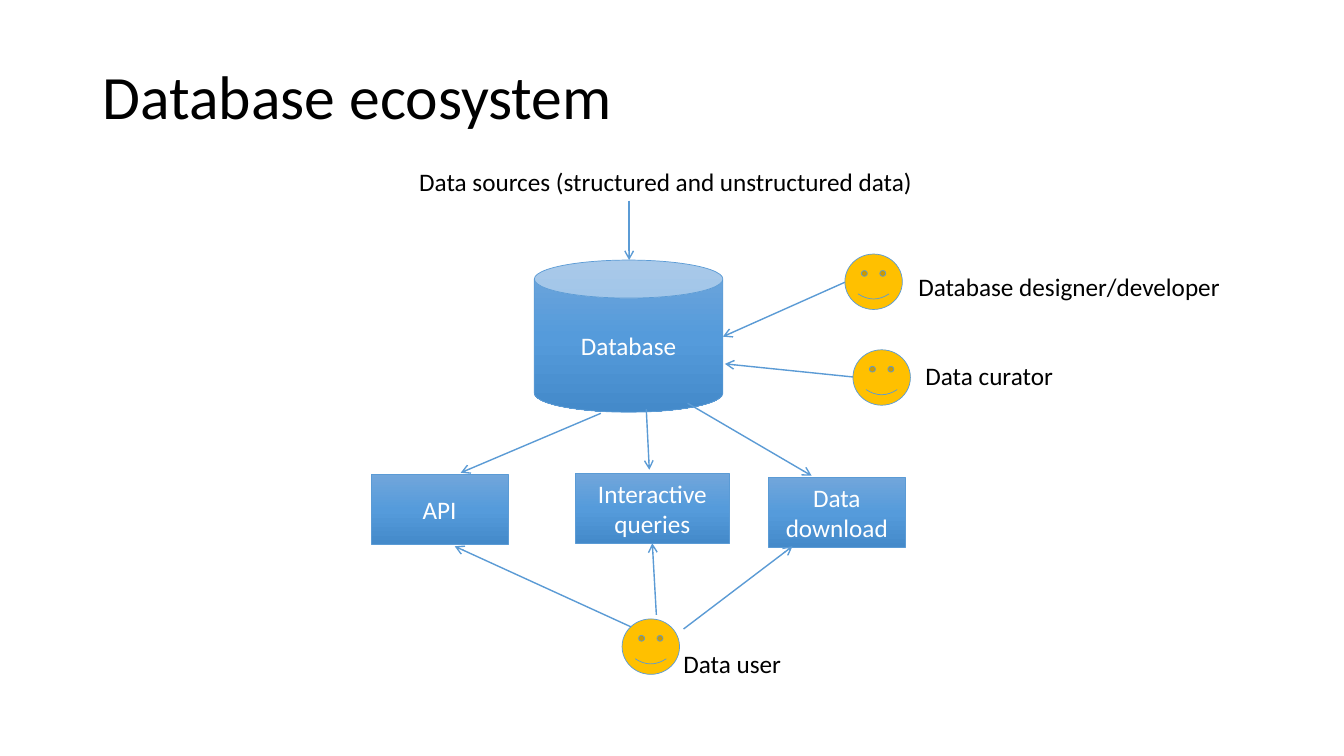
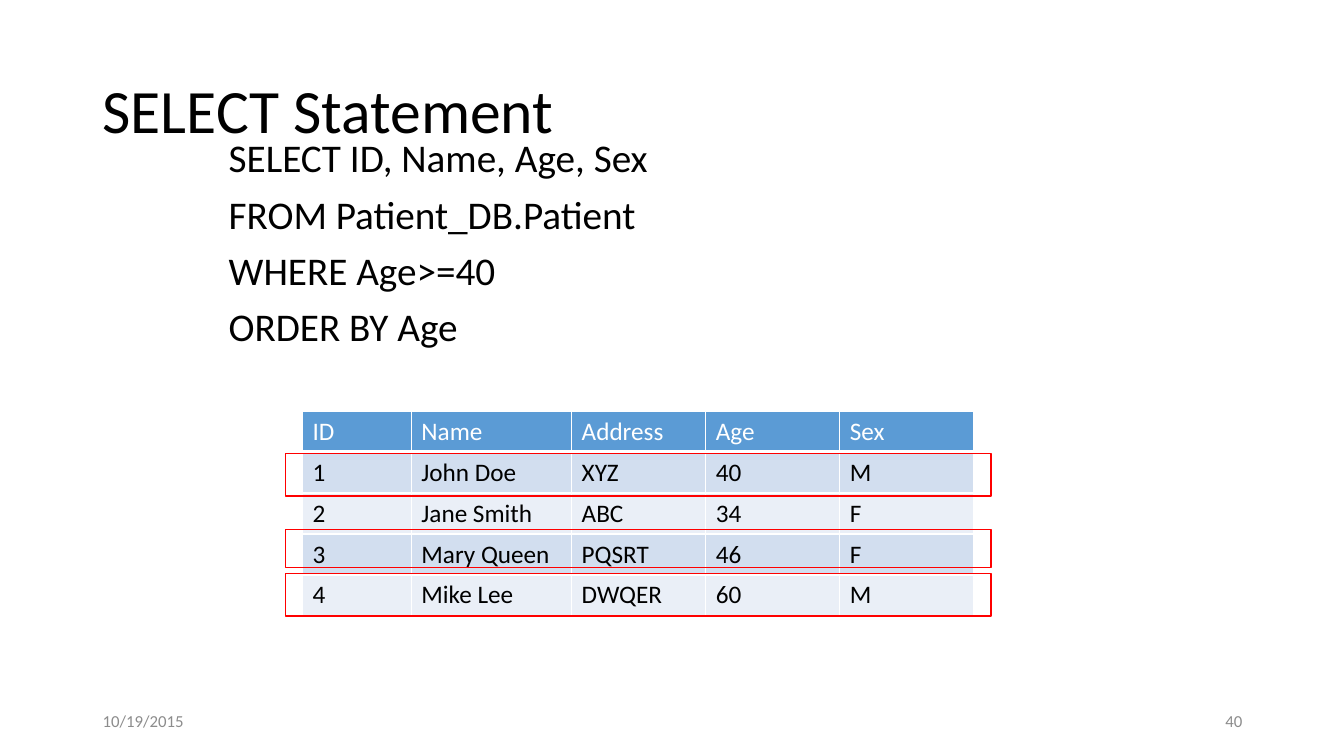
from dataclasses import dataclass
from typing import NamedTuple

from lxml import etree
from pptx import Presentation
from pptx.dml.color import RGBColor
from pptx.enum.shapes import MSO_CONNECTOR, MSO_SHAPE
from pptx.enum.text import MSO_ANCHOR, PP_ALIGN
from pptx.oxml.ns import qn
from pptx.slide import Slide
from pptx.text.text import TextFrame
from pptx.util import Emu, Pt

RECT, CAN, SMILEY = MSO_SHAPE.RECTANGLE, MSO_SHAPE.CAN, MSO_SHAPE.SMILEY_FACE
STRAIGHT = MSO_CONNECTOR.STRAIGHT
TOP, MIDDLE = MSO_ANCHOR.TOP, MSO_ANCHOR.MIDDLE
LEFT, CENTER, RIGHT = PP_ALIGN.LEFT, PP_ALIGN.CENTER, PP_ALIGN.RIGHT

EMU_PER_PX = 9144  # 100 px to the inch


@dataclass(frozen=True)
class Theme:
    font: str = "Calibri"
    text: str = "000000"
    light: str = "FFFFFF"
    muted: str = "8C8C8C"
    accent: str = "5B9BD5"
    gradient: tuple[str, ...] = ("71A6DB", "559BDB", "448ACA")
    face: str = "FFC000"
    highlight: str = "FF0000"
    bands: tuple[str, ...] = ("D2DEEF", "EAEFF7")
    title_size: int = 44
    body_size: int = 28
    label_size: int = 18
    footer_size: int = 12
    outline: float = 0.5
    rule: float = 1
    header_rule: float = 3


THEME = Theme()


class Box(NamedTuple):
    x: int
    y: int
    w: int
    h: int

    def emu(self) -> list[Emu]:
        return [px(v) for v in self]


class Node(NamedTuple):
    kind: MSO_SHAPE
    text: str
    box: Box


class Person(NamedTuple):
    role: str
    x: int
    y: int
    label: Box


class Arrow(NamedTuple):
    x1: int
    y1: int
    x2: int
    y2: int


SOURCES = "Data sources (structured and unstructured data)"
SOURCES_BOX = Box(406, 160, 516, 40)
NODES = [
    Node(CAN, "Database", Box(530, 258, 187, 151)),
    Node(RECT, "API", Box(368, 471, 136, 69)),
    Node(RECT, "Interactive queries", Box(571, 470, 152, 69)),
    Node(RECT, "Data download", Box(762, 474, 136, 69)),
]
FACE_W, FACE_H = 57, 55
PEOPLE = [
    Person("Database designer/developer", 838, 252, Box(901, 264, 323, 40)),
    Person("Data curator", 846, 347, Box(908, 353, 149, 40)),
    Person("Data user", 617, 614, Box(668, 638, 119, 40)),
]
ARROWS = [
    Arrow(624, 199, 624, 258),
    Arrow(838, 280, 717, 334),
    Arrow(846, 374, 719, 361),
    Arrow(596, 410, 457, 469),
    Arrow(641, 406, 644, 466),
    Arrow(682, 400, 805, 472),
    Arrow(626, 622, 451, 542),
    Arrow(651, 610, 647, 539),
    Arrow(678, 624, 786, 542),
]

QUERY = ["SELECT ID, Name, Age, Sex", "FROM Patient_DB.Patient",
         "WHERE Age>=40", "ORDER BY Age"]
PATIENTS = [
    ("ID", "Name", "Address", "Age", "Sex"),
    ("1", "John Doe", "XYZ", "40", "M"),
    ("2", "Jane Smith", "ABC", "34", "F"),
    ("3", "Mary Queen", "PQSRT", "46", "F"),
    ("4", "Mike Lee", "DWQER", "60", "M"),
]
TABLE_BOX = Box(300, 408, 667, 203)
COL_WIDTHS = (108, 159, 133, 133, 133)
MATCHES = [Box(283, 450, 700, 42), Box(283, 525, 700, 38), Box(283, 569, 700, 42)]


def px(n: int) -> Emu:
    return Emu(n * EMU_PER_PX)


def rgb(color: str) -> RGBColor:
    return RGBColor.from_string(color)


def write(tf: TextFrame, text: str, size: int, color: str, align: PP_ALIGN = LEFT,
          spacing: float = 1, before: int = 0) -> None:
    tf.text = text
    for p in tf.paragraphs:
        p.alignment, p.line_spacing, p.space_before = align, spacing, Pt(before)
        for r in p.runs:
            r.font.name, r.font.size, r.font.bold = THEME.font, Pt(size), False
            r.font.color.rgb = rgb(color)


def add_text(s: Slide, box: Box, text: str, size: int, color: str = THEME.text,
             align: PP_ALIGN = LEFT, anchor: MSO_ANCHOR = TOP, wrap: bool = True,
             spacing: float = 1, before: int = 0) -> None:
    tf = s.shapes.add_textbox(*box.emu()).text_frame
    tf.word_wrap, tf.vertical_anchor = wrap, anchor
    write(tf, text, size, color, align, spacing, before)


def add_label(s: Slide, box: Box, text: str) -> None:
    add_text(s, box, text, THEME.label_size, wrap=False)


def add_title(s: Slide, text: str, y: int) -> None:
    add_text(s, Box(92, y, 1150, 145), text, THEME.title_size,
             anchor=MIDDLE, spacing=0.9)


def add_footer(s: Slide, date: str, number: str) -> None:
    for x, text, align in ((92, date, LEFT), (942, number, RIGHT)):
        add_text(s, Box(x, 695, 300, 40), text, THEME.footer_size, THEME.muted,
                 align, MIDDLE)


def add_outlined(s: Slide, kind: MSO_SHAPE, box: Box, color: str, width: float):
    sp = s.shapes.add_shape(kind, *box.emu())
    sp.shadow.inherit = False
    sp.line.color.rgb, sp.line.width = rgb(color), Pt(width)
    return sp


def add_node(s: Slide, node: Node) -> None:
    sp = add_outlined(s, node.kind, node.box, THEME.accent, THEME.outline)
    sp.fill.gradient()
    sp.fill.gradient_angle = 270
    stops = sp._element.spPr.find(f"{qn('a:gradFill')}/{qn('a:gsLst')}")
    for stop in list(stops):
        stops.remove(stop)
    for i, color in enumerate(THEME.gradient):
        stop = etree.SubElement(stops, qn("a:gs"), pos=str(i * 50000))
        etree.SubElement(stop, qn("a:srgbClr"), val=color)
    sp.text_frame.word_wrap, sp.text_frame.vertical_anchor = True, MIDDLE
    write(sp.text_frame, node.text, THEME.label_size, THEME.light, CENTER)


def add_person(s: Slide, person: Person) -> None:
    box = Box(person.x, person.y, FACE_W, FACE_H)
    sp = add_outlined(s, SMILEY, box, THEME.accent, THEME.outline)
    sp.fill.solid()
    sp.fill.fore_color.rgb = rgb(THEME.face)
    add_label(s, person.label, person.role)


def add_arrow(s: Slide, arrow: Arrow) -> None:
    line = s.shapes.add_connector(STRAIGHT, *[px(v) for v in arrow])
    line.line.color.rgb, line.line.width = rgb(THEME.accent), Pt(THEME.rule)
    etree.SubElement(line.line._get_or_add_ln(), qn("a:tailEnd"), type="arrow")
    etree.SubElement(line._element.spPr, qn("a:effectLst"))


def set_borders(cell, top: float, bottom: float) -> None:
    tc_pr = cell._tc.get_or_add_tcPr()
    widths = {"L": THEME.rule, "R": THEME.rule, "T": top, "B": bottom}
    for side, width in widths.items():
        ln = etree.SubElement(tc_pr, qn(f"a:ln{side}"), w=str(Pt(width)))
        fill = etree.SubElement(ln, qn("a:solidFill"))
        etree.SubElement(fill, qn("a:srgbClr"), val=THEME.light)


def add_patient_table(s: Slide) -> None:
    table = s.shapes.add_table(len(PATIENTS), len(COL_WIDTHS), *TABLE_BOX.emu()).table
    table.first_row = table.horz_banding = False
    for col, width in zip(table.columns, COL_WIDTHS):
        col.width = px(width)
    for i, values in enumerate(PATIENTS):
        header = i == 0
        top = THEME.header_rule if i == 1 else THEME.rule
        bottom = THEME.header_rule if header else THEME.rule
        for cell, value in zip(table.rows[i].cells, values):
            set_borders(cell, top, bottom)
            cell.fill.solid()
            band = THEME.bands[(i - 1) % len(THEME.bands)]
            cell.fill.fore_color.rgb = rgb(THEME.accent if header else band)
            write(cell.text_frame, value, THEME.label_size,
                  THEME.light if header else THEME.text)


def build_ecosystem(s: Slide) -> None:
    add_title(s, "Database ecosystem", 26)
    add_label(s, SOURCES_BOX, SOURCES)
    for node in NODES:
        add_node(s, node)
    for person in PEOPLE:
        add_person(s, person)
    for arrow in ARROWS:
        add_arrow(s, arrow)


def build_select(s: Slide) -> None:
    add_title(s, "SELECT Statement", 40)
    add_text(s, Box(217, 133, 900, 495), "\n".join(QUERY), THEME.body_size,
             spacing=0.9, before=10)
    add_patient_table(s)
    for box in MATCHES:
        add_outlined(s, RECT, box, THEME.highlight, THEME.rule).fill.background()
    add_footer(s, "10/19/2015", "40")


def main() -> None:
    prs = Presentation()
    prs.slide_width, prs.slide_height = px(1333), px(750)
    blank = prs.slide_layouts[6]
    for build in (build_ecosystem, build_select):
        build(prs.slides.add_slide(blank))
    prs.save("out.pptx")


if __name__ == "__main__":
    main()
